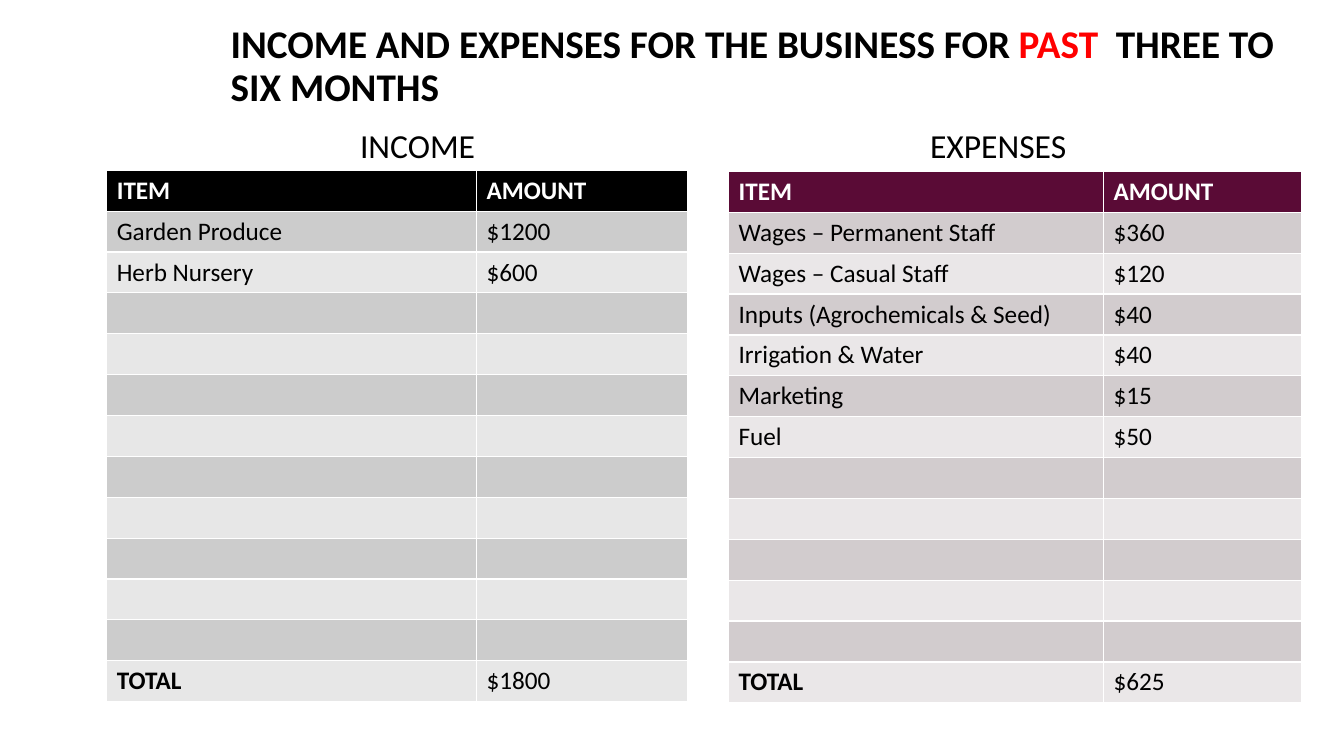
import pptx
import pptx.util
import pptx.dml.color
import pptx.enum.text
from pptx.util import Cm, Pt

ALIGN = pptx.enum.text.PP_ALIGN
ANCHOR = pptx.enum.text.MSO_ANCHOR

TITLE = [
    ("INCOME AND EXPENSES FOR THE BUSINESS FOR ", "000000"),
    ("PAST ", "FF0000"),
    (" THREE TO SIX MONTHS", "000000"),
]
HEADER = ("ITEM", "AMOUNT")
SLOTS = 11
ROW = 1.03
LEDGERS = [
    {
        "name": "INCOME",
        "label": 3.73,
        "left": 2.69,
        "top": 4.29,
        "cols": (9.32, 5.31),
        "fills": ("000000", "CCCCCC", "E7E7E7"),
        "items": [("Garden Produce", "$1200"), ("Herb Nursery", "$600")],
        "total": "$1800",
    },
    {
        "name": "EXPENSES",
        "label": 18.36,
        "left": 18.36,
        "top": 4.32,
        "cols": (9.45, 4.98),
        "fills": ("5A0B36", "D2CCCE", "EAE7E8"),
        "items": [
            ("Wages – Permanent Staff", "$360"),
            ("Wages – Casual Staff", "$120"),
            ("Inputs (Agrochemicals & Seed)", "$40"),
            ("Irrigation & Water", "$40"),
            ("Marketing", "$15"),
            ("Fuel", "$50"),
        ],
        "total": "$625",
    },
]


def color(code):
    return pptx.dml.color.RGBColor.from_string(code)


def apply(target, values):
    for name, value in values.items():
        setattr(target, name, value)


def style(font, size, code, bold=False):
    apply(font, {"name": "Calibri", "size": Pt(size), "bold": bold})
    font.color.rgb = color(code)


def add_title(slide):
    title = slide.shapes.title
    apply(title, {"left": Cm(5.56), "top": Cm(0.69),
                  "width": Cm(27.84), "height": Cm(2.01)})
    apply(title.text_frame, {"word_wrap": True, "vertical_anchor": ANCHOR.MIDDLE,
                             "auto_size": pptx.enum.text.MSO_AUTO_SIZE.NONE})
    para = title.text_frame.paragraphs[0]
    apply(para, {"alignment": ALIGN.LEFT, "line_spacing": 0.9})
    for text, code in TITLE:
        run = para.add_run()
        run.text = text
        style(run.font, 28, code, True)


def add_label(slide, ledger):
    box = slide.shapes.add_textbox(Cm(ledger["label"]), Cm(2.69), Cm(13.59), Cm(1.6))
    apply(box.text_frame, {"word_wrap": True, "vertical_anchor": ANCHOR.BOTTOM})
    para = box.text_frame.paragraphs[0]
    apply(para, {"text": ledger["name"], "alignment": ALIGN.CENTER, "line_spacing": 0.9})
    style(para.runs[0].font, 24, "000000")


def add_ledger(slide, ledger):
    items = ledger["items"]
    blank = [("", "")] * (SLOTS - len(items))
    rows = [HEADER, *items, *blank, ("TOTAL", ledger["total"])]
    cols = ledger["cols"]
    table = slide.shapes.add_table(
        len(rows), len(cols), Cm(ledger["left"]), Cm(ledger["top"]),
        Cm(sum(cols)), Cm(ROW * len(rows))).table
    for col, width in zip(table.columns, cols):
        col.width = Cm(width)
    head, odd, even = ledger["fills"]
    for r, row in enumerate(rows):
        table.rows[r].height = Cm(ROW)
        fill = head if r == 0 else odd if r % 2 else even
        for c, text in enumerate(row):
            cell = table.cell(r, c)
            cell.fill.solid()
            cell.fill.fore_color.rgb = color(fill)
            para = cell.text_frame.paragraphs[0]
            if text:
                run = para.add_run()
                run.text = text
                style(run.font, 18, "FFFFFF" if r == 0 else "000000",
                      r == 0 or text == "TOTAL")


def main():
    deck = pptx.Presentation()
    apply(deck, {"slide_width": Cm(33.87), "slide_height": Cm(19.05)})
    slide = deck.slides.add_slide(deck.slide_layouts[5])
    add_title(slide)
    for ledger in LEDGERS:
        add_label(slide, ledger)
        add_ledger(slide, ledger)
    deck.save("out.pptx")


if __name__ == "__main__":
    main()
